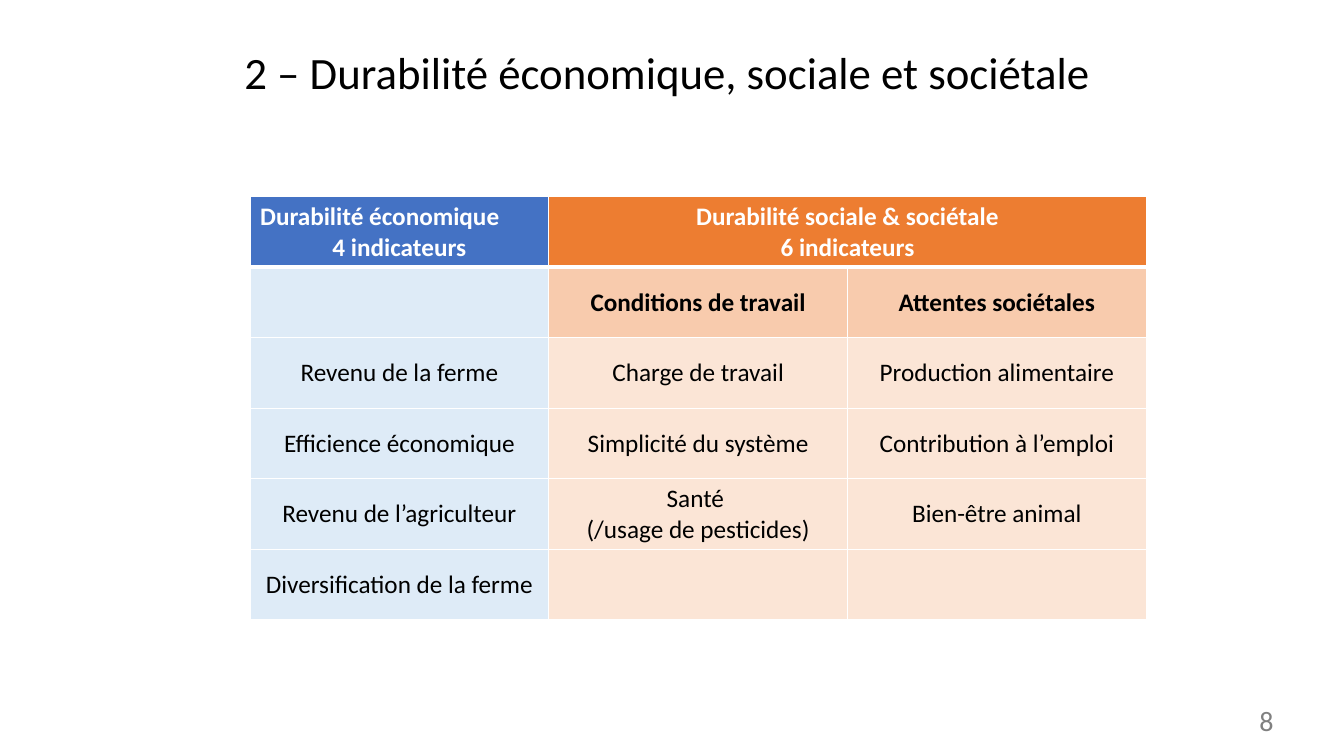
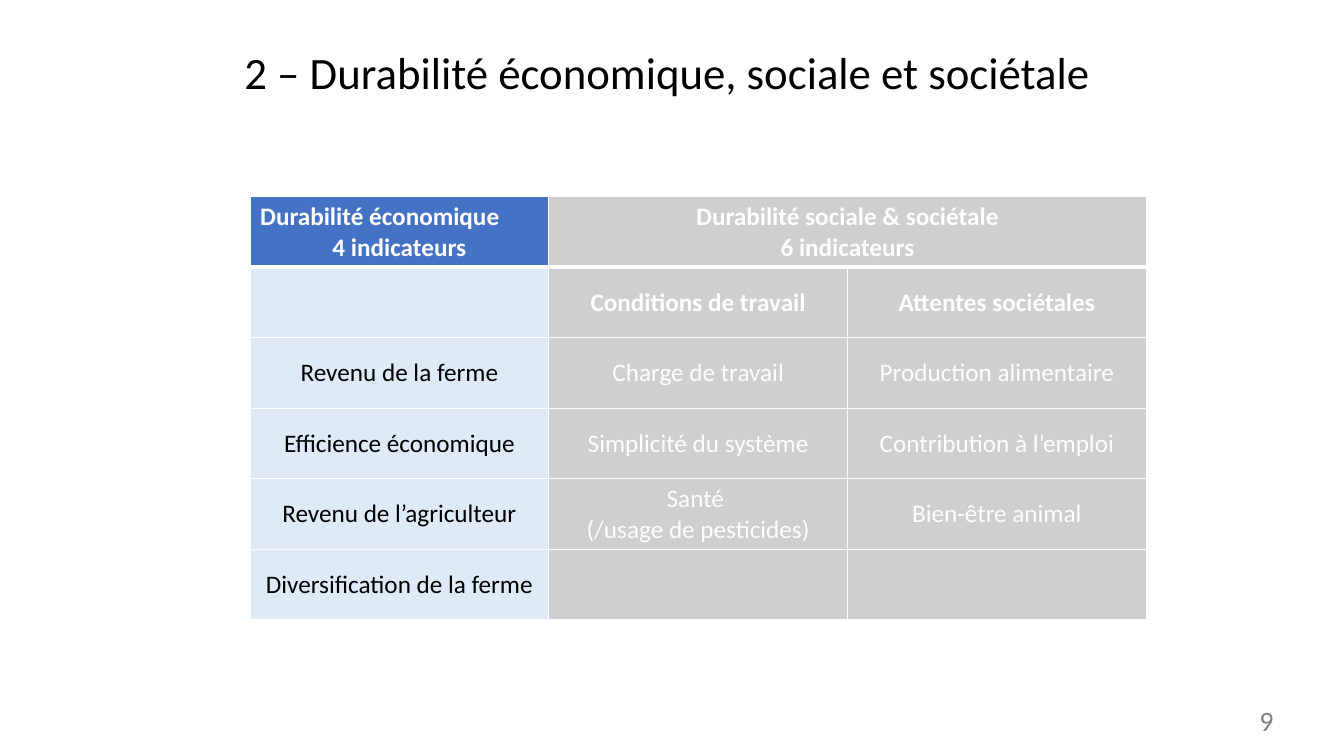
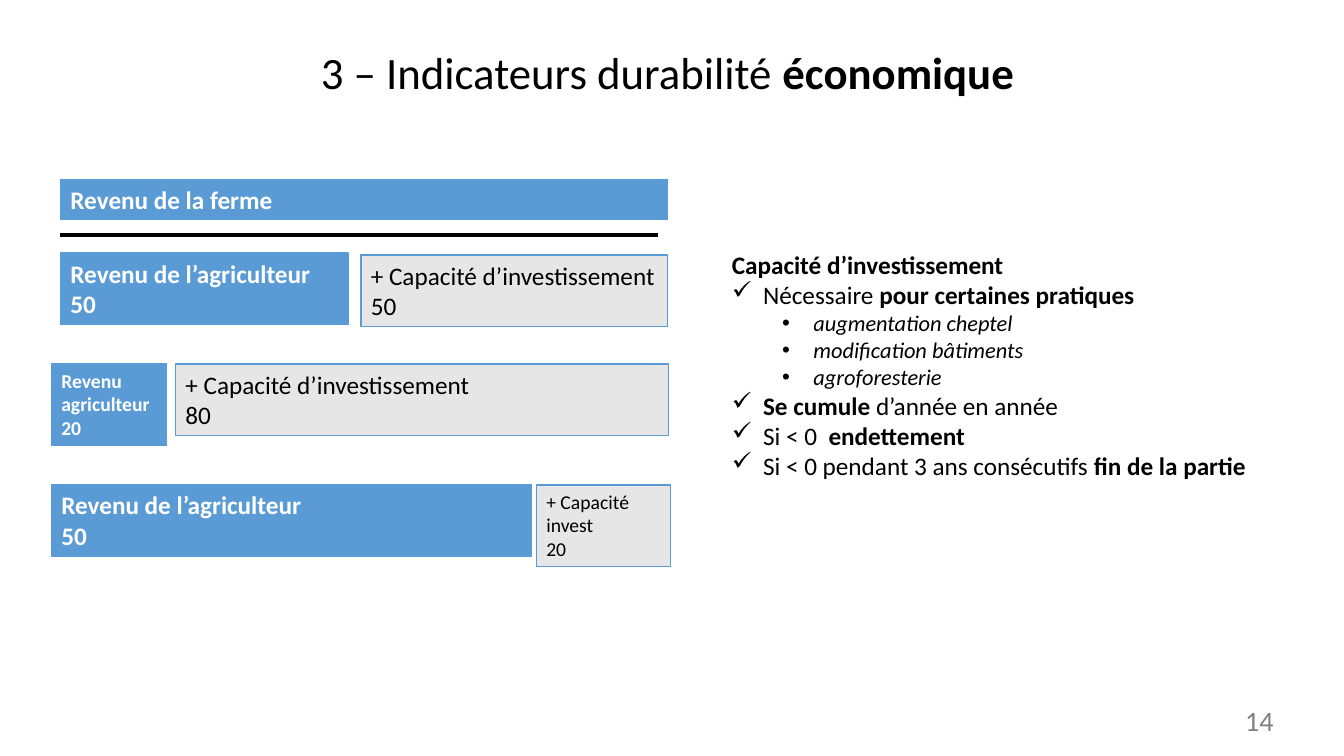
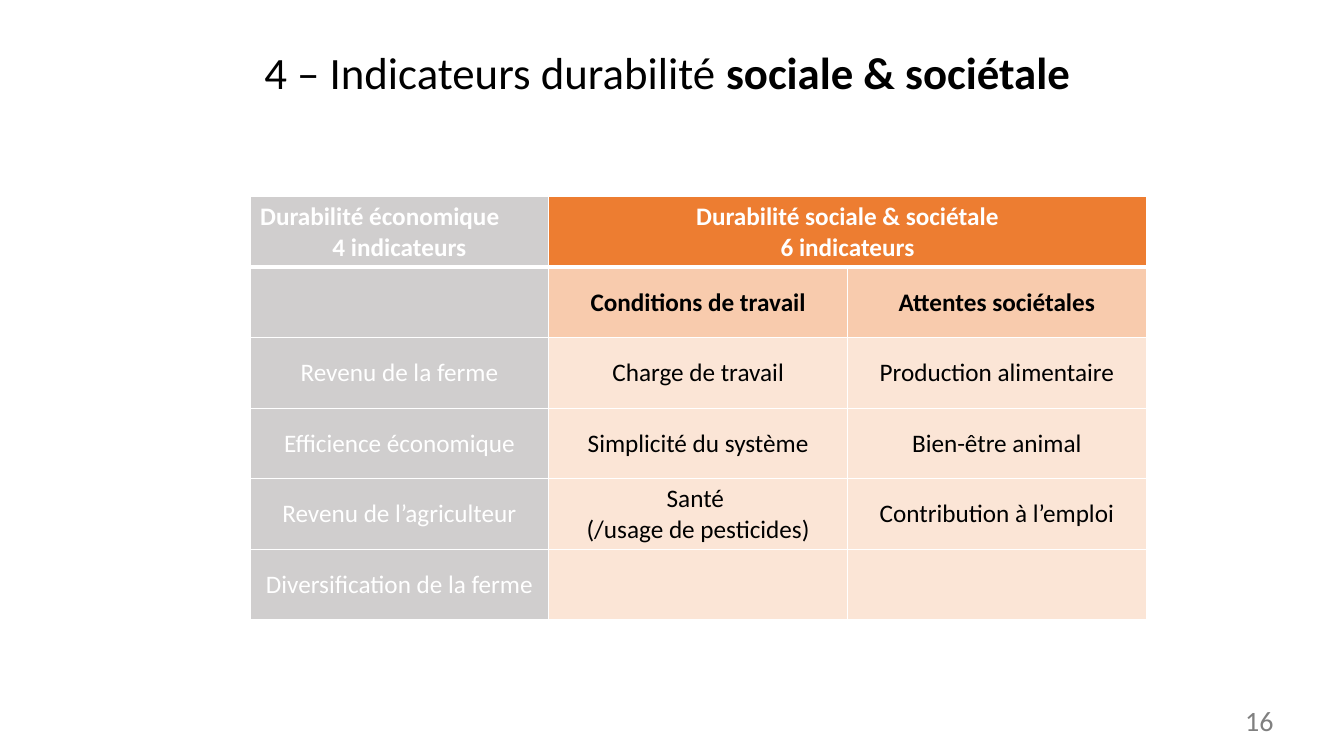
from dataclasses import dataclass

import lxml.etree
import pptx
import pptx.dml.color
import pptx.enum.shapes
import pptx.enum.text
import pptx.oxml.ns
import pptx.util

Inches = pptx.util.Inches
Pt = pptx.util.Pt
Align = pptx.enum.text.PP_ALIGN
Anchor = pptx.enum.text.MSO_ANCHOR
AutoSize = pptx.enum.text.MSO_AUTO_SIZE
qn = pptx.oxml.ns.qn


@dataclass(frozen=True)
class Theme:
    font: str = "Calibri"
    black: str = "000000"
    white: str = "FFFFFF"
    page_grey: str = "808080"
    muted: str = "D0CECE"
    bar_blue: str = "5B9BD5"
    bar_grey: str = "E7E6E6"
    # fills of the header, subheader and body rows
    economic: tuple = ("4472C4", "DEEBF7", "DEEBF7")
    social: tuple = ("ED7D31", "F8CBAD", "FBE5D6")
    title_size: int = 32
    page_size: int = 20
    body_size: int = 18
    detail_size: int = 16
    small_size: int = 14


THEME = Theme()
TITLE_BOX = (0.51, 0.4, 12.22, 0.69)
PAGE_BOX = (11.91, 6.95, 0.82, 0.4)
TABLE_BOX = (2.48, 1.95, 8.89, 4.2)
BARS_BOX = (0.51, 1.78, 6.14, 3.84)
NOTES_BOX = (7.16, 2.42, 5.58, 3.03)

TITLE_SUSTAINABILITY = [("2 – Durabilité économique, sociale et sociétale", False)]
INDICATORS = [
    [["Durabilité économique", "4 indicateurs"],
     ["Durabilité sociale & sociétale", "6 indicateurs"], []],
    [[], ["Conditions de travail"], ["Attentes sociétales"]],
    [["Revenu de la ferme"], ["Charge de travail"], ["Production alimentaire"]],
    [["Efficience économique"], ["Simplicité du système"], ["Contribution à l’emploi"]],
    [["Revenu de l’agriculteur"], ["Santé ", "(/usage de pesticides)"], ["Bien-être animal"]],
    [["Diversification de la ferme"], [], []],
]
INVESTMENT_NOTES = [  # kind of line, runs
    ("heading", [("Capacité d’investissement", True)]),
    ("check", [("Nécessaire ", False), ("pour certaines pratiques", True)]),
    ("detail", [("augmentation cheptel", False)]),
    ("detail", [("modification bâtiments", False)]),
    ("detail", [("agroforesterie", False)]),
    ("check", [("Se cumule ", True), ("d’année en année", False)]),
    ("check", [("Si < 0  ", False), ("endettement", True)]),
    ("check", [("Si < 0 pendant 3 ans consécutifs ", False), ("fin de la partie", True)]),
]
BULLETS = {"check": ("✓", 0, 0.31), "detail": ("•", 1, 0.81)}  # sign, level, indent


# Shared helpers
def rgb(value):
    return pptx.dml.color.RGBColor.from_string(value)


def assign(target, formats):
    for name, value in formats.items():
        setattr(target, name, value)


def add_runs(paragraph, runs, size, color, italic=False):
    for text, bold in runs:
        run = paragraph.add_run()
        run.text = text
        assign(run.font, {"name": THEME.font, "size": Pt(size),
                          "bold": bold, "italic": italic})
        run.font.color.rgb = rgb(color)


def paragraphs(frame, count):
    return [frame.paragraphs[0]] + [frame.add_paragraph() for _ in range(count - 1)]


def text_box(slide, box, anchor):
    frame = slide.shapes.add_textbox(*map(Inches, box)).text_frame
    assign(frame, {"word_wrap": True, "vertical_anchor": anchor})
    return frame


# Title and page number
def add_page(deck, title, number):
    slide = deck.slides.add_slide(deck.slide_layouts[6])
    heading = text_box(slide, TITLE_BOX, Anchor.MIDDLE).paragraphs[0]
    assign(heading, {"alignment": Align.CENTER, "line_spacing": 0.9})
    add_runs(heading, title, THEME.title_size, THEME.black)
    page = text_box(slide, PAGE_BOX, Anchor.MIDDLE).paragraphs[0]
    page.alignment = Align.RIGHT
    add_runs(page, [(str(number), False)], THEME.page_size, THEME.page_grey)
    return slide


# Table of indicators
def set_borders(cell, widths):
    properties = cell._tc.get_or_add_tcPr()
    for position, (side, width) in enumerate(widths.items()):
        line = lxml.etree.Element(qn(f"a:{side}"), w=str(Pt(width)))
        fill = lxml.etree.SubElement(line, qn("a:solidFill"))
        lxml.etree.SubElement(fill, qn("a:srgbClr"), val=THEME.white)
        properties.insert(position, line)


def add_indicator_table(slide, box, rows, muted=None):
    frame = slide.shapes.add_table(len(rows), 3, *map(Inches, box))
    table = frame.table
    assign(table, {"first_row": False, "horz_banding": False})
    for column in table.columns:
        column.width = Inches(box[2] / 3)
    for row in table.rows:
        row.height = Inches(box[3] / len(rows))
    table.cell(0, 1).merge(table.cell(0, 2))
    for r, row in enumerate(rows):
        for c, lines in enumerate(row):
            cell = table.cell(r, c)
            group = "social" if c else "economic"
            cell.vertical_anchor = Anchor.MIDDLE
            cell.fill.solid()
            fill = THEME.muted if group == muted else getattr(THEME, group)[min(r, 2)]
            cell.fill.fore_color.rgb = rgb(fill)
            set_borders(cell, {"lnL": 1, "lnR": 1, "lnT": 3 if r == 1 else 1,
                               "lnB": 3 if r == 0 else 1})
            if not lines:
                continue
            color = THEME.white if r == 0 or group == muted else THEME.black
            for i, paragraph in enumerate(paragraphs(cell.text_frame, len(lines))):
                first_heading = r == c == i == 0
                paragraph.alignment = Align.LEFT if first_heading else Align.CENTER
                add_runs(paragraph, [(lines[i], r < 2)], THEME.body_size, color)


# Bars that share the income between farmer and investment
def add_bar(slide, box, lines, income, size=THEME.body_size):
    bar = slide.shapes.add_shape(pptx.enum.shapes.MSO_SHAPE.RECTANGLE, *map(Inches, box))
    bar.shadow.inherit = False
    bar.fill.solid()
    bar.fill.fore_color.rgb = rgb(THEME.bar_blue if income else THEME.bar_grey)
    bar.line.color.rgb = rgb(THEME.bar_blue)
    bar.line.width = Pt(1)
    frame = bar.text_frame
    assign(frame, {"word_wrap": True, "vertical_anchor": Anchor.TOP,
                   "auto_size": AutoSize.SHAPE_TO_FIT_TEXT})
    color = THEME.white if income else THEME.black
    for paragraph, line in zip(paragraphs(frame, len(lines)), lines):
        paragraph.alignment = Align.LEFT
        add_runs(paragraph, [(line, income)], size, color)


def add_income_bars(slide, box):
    left, top = box[:2]
    small = THEME.small_size
    bars = [  # x, y, width, height, lines, income, size
        (0.09, 0, 6.02, 0.4, ["Revenu de la ferme"], True, THEME.body_size),
        (0.09, 0.73, 2.85, 0.71, ["Revenu de l’agriculteur 50"], True, THEME.body_size),
        (3.07, 0.75, 3.04, 0.71, ["+ Capacité d’investissement", "50"], False, THEME.body_size),
        (0, 1.83, 1.14, 0.81, ["Revenu agriculteur", "20"], True, small),
        (1.23, 1.83, 4.89, 0.71, ["+ Capacité d’investissement", "80"], False, THEME.body_size),
        (0, 3.03, 4.76, 0.71, ["Revenu de l’agriculteur", "50"], True, THEME.body_size),
        (4.81, 3.03, 1.33, 0.81, ["+ Capacité invest", "20"], False, small),
    ]
    for x, y, width, height, lines, income, size in bars:
        add_bar(slide, (left + x, top + y, width, height), lines, income, size)
    divider = slide.shapes.add_connector(
        pptx.enum.shapes.MSO_CONNECTOR.STRAIGHT,
        *map(Inches, (left + 0.09, top + 0.55, left + 6.02, top + 0.55)))
    divider.line.color.rgb = rgb(THEME.black)
    divider.line.width = Pt(3)
    lxml.etree.SubElement(divider._element.spPr, qn("a:effectLst"))


# Notes on the investment capacity
def add_bullet(paragraph, sign, level, indent):
    paragraph.level = level
    properties = paragraph._p.get_or_add_pPr()
    properties.set("marL", str(Inches(indent)))
    properties.set("indent", str(Inches(-0.31)))
    if level:
        lxml.etree.SubElement(properties, qn("a:buFont"), typeface="Arial")
    lxml.etree.SubElement(properties, qn("a:buChar"), char=sign)


def add_notes_list(slide, box, notes):
    frame = text_box(slide, box, Anchor.TOP)
    for paragraph, (kind, runs) in zip(paragraphs(frame, len(notes)), notes):
        if kind in BULLETS:
            add_bullet(paragraph, *BULLETS[kind])
        detail = kind == "detail"
        size = THEME.detail_size if detail else THEME.body_size
        add_runs(paragraph, runs, size, THEME.black, italic=detail)


# Slides
def indicator_slide(deck, title, number, rows, muted=None):
    slide = add_page(deck, title, number)
    add_indicator_table(slide, TABLE_BOX, rows, muted)


def investment_slide(deck, title, number):
    slide = add_page(deck, title, number)
    add_income_bars(slide, BARS_BOX)
    add_notes_list(slide, NOTES_BOX, INVESTMENT_NOTES)


def main():
    deck = pptx.Presentation()
    assign(deck, {"slide_width": Inches(13.33), "slide_height": Inches(7.5)})
    indicator_slide(deck, TITLE_SUSTAINABILITY, 8, INDICATORS)
    indicator_slide(deck, TITLE_SUSTAINABILITY, 9, INDICATORS, muted="social")
    investment_slide(deck, [("3 – Indicateurs durabilité ", False), ("économique", True)], 14)
    # The last table swaps two of the societal expectations
    reordered = [list(row) for row in INDICATORS]
    reordered[3][2], reordered[4][2] = reordered[4][2], reordered[3][2]
    indicator_slide(deck, [("4 – Indicateurs durabilité ", False), ("sociale & sociétale", True)],
                    16, reordered, muted="economic")
    deck.save("out.pptx")


if __name__ == "__main__":
    main()
